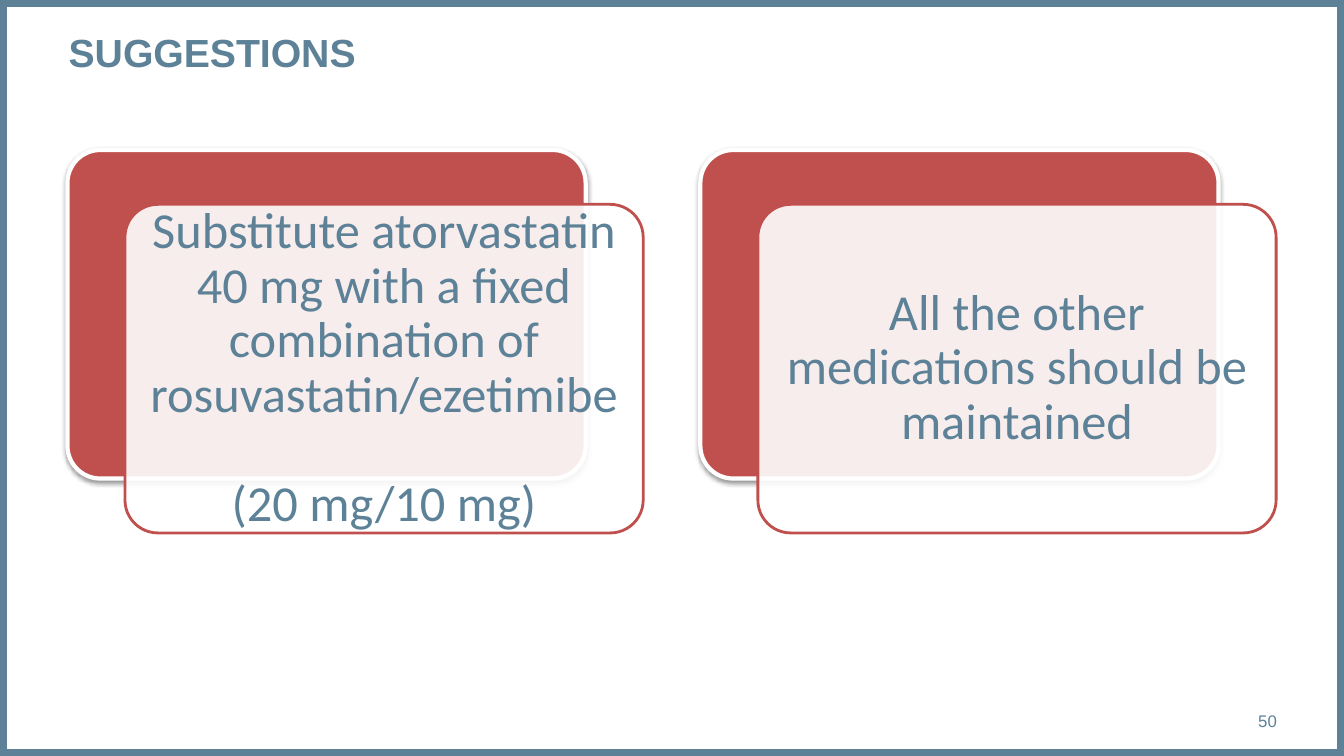
from dataclasses import dataclass

from lxml.etree import SubElement
from pptx import Presentation
from pptx.dml.color import RGBColor
from pptx.enum.shapes import MSO_SHAPE
from pptx.enum.text import MSO_ANCHOR, MSO_AUTO_SIZE, PP_ALIGN
from pptx.oxml.ns import qn
from pptx.util import Cm, Pt


@dataclass(frozen=True)
class Theme:
    slate: RGBColor = RGBColor(0x5D, 0x82, 0x98)
    red: RGBColor = RGBColor(0xC0, 0x50, 0x4D)
    white: RGBColor = RGBColor(0xFF, 0xFF, 0xFF)
    heading_font: str = "Arial"
    card_font: str = "Calibri"
    title_size: Pt = Pt(28)
    card_size: Pt = Pt(36)
    number_size: Pt = Pt(12)


theme = Theme()


def set_text_frame(frame, anchor, inset):
    frame.word_wrap = True
    frame.auto_size = MSO_AUTO_SIZE.NONE
    frame.vertical_anchor = anchor
    frame.margin_left = frame.margin_right = inset
    frame.margin_top = frame.margin_bottom = inset


def add_card(left, top, fill, line, line_width):
    card = slide.shapes.add_shape(
        MSO_SHAPE.ROUNDED_RECTANGLE, left, top, Cm(13.06), Cm(8.28))
    card.adjustments[0] = 0.1
    card.shadow.inherit = False
    card.fill.solid()
    card.fill.fore_color.rgb = fill
    card.line.color.rgb = line
    card.line.width = line_width
    return card


presentation = Presentation()
presentation.slide_width = Cm(33.87)
presentation.slide_height = Cm(19.05)
slide = presentation.slides.add_slide(presentation.slide_layouts[5])

# Frame around the slide
border = slide.shapes.add_shape(
    MSO_SHAPE.RECTANGLE, 0, 0, presentation.slide_width, presentation.slide_height)
border.shadow.inherit = False
border.fill.background()
border.line.color.rgb = theme.slate
border.line.width = Pt(10)

# Title
title = slide.shapes.title
title.left, title.top, title.width, title.height = Cm(1.73), Cm(0.71), Cm(30.45), Cm(2.39)
set_text_frame(title.text_frame, MSO_ANCHOR.TOP, 0)
title.text_frame.text = "SUGGESTIONS"
paragraph = title.text_frame.paragraphs[0]
paragraph.alignment = PP_ALIGN.LEFT
paragraph.font.name = theme.heading_font
paragraph.font.size = theme.title_size
paragraph.font.bold = True
paragraph.font.color.rgb = theme.slate

# Suggestion cards: a red card with a translucent text card in front
suggestions = [
    ["Substitute atorvastatin 40 mg with a fixed combination of rosuvastatin/ezetimibe",
     "(20 mg/10 mg)"],
    ["All the other medications should be maintained"],
]
for column, lines in enumerate(suggestions):
    left, top = Cm(1.7 + 15.95 * column), Cm(3.78)

    back_card = add_card(left, top, theme.red, theme.white, Pt(3))
    effects = back_card.element.spPr.find(qn("a:effectLst"))
    shadow = SubElement(effects, qn("a:outerShdw"), blurRad=str(Pt(3.1)),
                        dist=str(Pt(1.6)), dir="5400000", rotWithShape="0")
    shadow_color = SubElement(shadow, qn("a:srgbClr"), val="000000")
    SubElement(shadow_color, qn("a:alpha"), val="38000")

    text_card = add_card(left + Cm(1.45), top + Cm(1.37), theme.white, theme.red, Pt(2))
    fill_color = text_card.element.spPr.find(qn("a:solidFill"))[0]
    SubElement(fill_color, qn("a:alpha"), val="90000")

    frame = text_card.text_frame
    set_text_frame(frame, MSO_ANCHOR.MIDDLE, Cm(0.38))
    frame.text = "\n".join(lines)
    for index, paragraph in enumerate(frame.paragraphs):
        paragraph.alignment = PP_ALIGN.CENTER
        paragraph.line_spacing = 0.9
        if index > 0:
            paragraph.space_before = Pt(39)
        paragraph.font.name = theme.card_font
        paragraph.font.size = theme.card_size
        paragraph.font.color.rgb = theme.slate

# Slide number
number_box = slide.shapes.add_textbox(Cm(29.21), Cm(17.65), Cm(2.97), Cm(1.02))
set_text_frame(number_box.text_frame, MSO_ANCHOR.MIDDLE, 0)
number_box.text_frame.text = "50"
paragraph = number_box.text_frame.paragraphs[0]
paragraph.alignment = PP_ALIGN.RIGHT
paragraph.font.name = theme.heading_font
paragraph.font.size = theme.number_size
paragraph.font.color.rgb = theme.slate

presentation.save("out.pptx")
